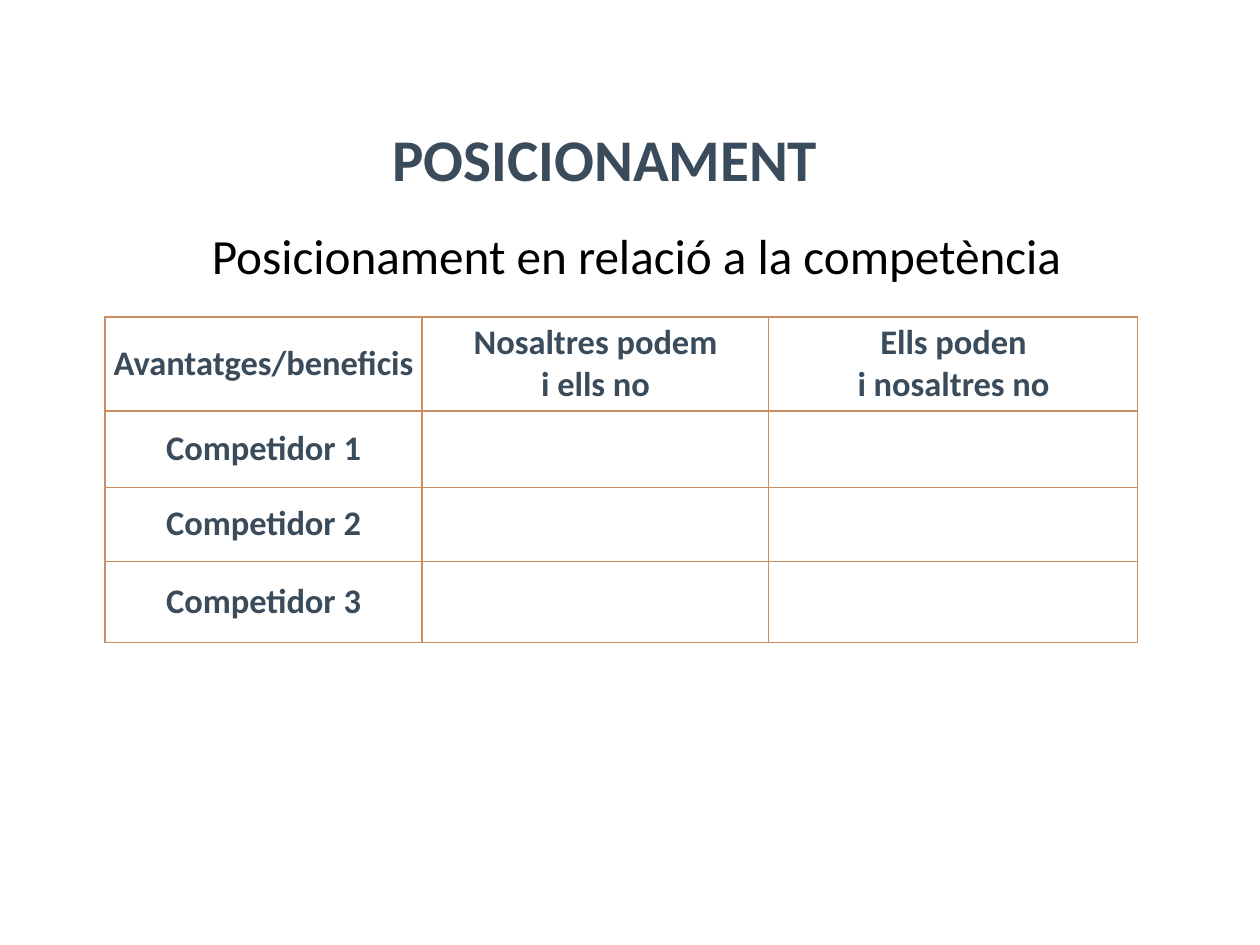
"""Build the competitive positioning slide with its comparison table."""
import pptx
import pptx.dml.color
import pptx.enum.text
import pptx.oxml
import pptx.oxml.ns
import pptx.util

TITLE = "posicionament"
SUBTITLE = "Posicionament en relació a la competència"
ROWS = [
    ["Avantatges/beneficis", "Nosaltres podem\ni ells no", "Ells poden\ni nosaltres no"],
    ["Competidor 1", "", ""],
    ["Competidor 2", "", ""],
    ["Competidor 3", "", ""],
]
COL_WIDTHS = [317, 347, 369]
ROW_HEIGHTS = [74, 76, 74, 81]
TABLE_LEFT, TABLE_TOP = 105, 317
TITLE_BOX = (371, 73, 468, 128)
SUBTITLE_BOX = (105, 221, 1063, 68)
INSET = 5
SLATE, COPPER, WHITE, BLACK = "3A4C5B", "CC8E60", "FFFFFF", "000000"
ANCHOR = pptx.enum.text.MSO_ANCHOR


def px(n):
    return pptx.util.Emu(n * 10320)


def rgb(value):
    return pptx.dml.color.RGBColor.from_string(value)


def style(tf, size, color, bold=False):
    for p in tf.paragraphs:
        p.alignment = pptx.enum.text.PP_ALIGN.CENTER
        p.font.name = "Calibri"
        p.font.size = pptx.util.Pt(size)
        p.font.bold = bold
        p.font.color.rgb = rgb(color)


def set_insets(target):
    target.margin_left = target.margin_right = px(INSET)
    target.margin_top = target.margin_bottom = px(INSET)


def set_borders(cell, top, bottom):
    tcPr = cell._tc.get_or_add_tcPr()
    widths = {"L": 1, "R": 1, "T": top, "B": bottom}
    for i, (side, width) in enumerate(widths.items()):
        tcPr.insert(i, pptx.oxml.parse_xml(
            f'<a:ln{side} {pptx.oxml.ns.nsdecls("a")} w="{pptx.util.Pt(width)}">'
            f'<a:solidFill><a:srgbClr val="{COPPER}"/></a:solidFill></a:ln{side}>'))


def add_title(s):
    sp = s.shapes.title
    sp.left, sp.top, sp.width, sp.height = map(px, TITLE_BOX)
    tf = sp.text_frame
    tf.text = TITLE
    tf.word_wrap = True
    tf.auto_size = pptx.enum.text.MSO_AUTO_SIZE.NONE
    tf.vertical_anchor = ANCHOR.BOTTOM
    set_insets(tf)
    style(tf, 60, SLATE, True)
    r = tf.paragraphs[0].runs[0]
    r._r.get_or_add_rPr().set("cap", "small")


def add_subtitle(s):
    tf = s.shapes.add_textbox(*map(px, SUBTITLE_BOX)).text_frame
    tf.text = SUBTITLE
    tf.word_wrap = True
    style(tf, 40, BLACK)


def add_comparison(s):
    size = (TABLE_LEFT, TABLE_TOP, sum(COL_WIDTHS), sum(ROW_HEIGHTS))
    table = s.shapes.add_table(len(ROWS), len(COL_WIDTHS), *map(px, size)).table
    table.first_row = table.horz_banding = False
    for column, width in zip(table.columns, COL_WIDTHS):
        column.width = px(width)
    for i, (row, height) in enumerate(zip(table.rows, ROW_HEIGHTS)):
        row.height = px(height)
        for cell, text in zip(row.cells, ROWS[i]):
            cell.text = text
            cell.vertical_anchor = ANCHOR.MIDDLE
            set_insets(cell)
            cell.fill.solid()
            cell.fill.fore_color.rgb = rgb(WHITE)
            set_borders(cell, 2 if i == 1 else 1, 2 if i == 0 else 1)
            style(cell.text_frame, 28, SLATE, True)


def main():
    prs = pptx.Presentation()
    prs.slide_width, prs.slide_height = px(1260), px(945)
    s = prs.slides.add_slide(prs.slide_layouts[5])
    add_comparison(s)
    add_title(s)
    add_subtitle(s)
    prs.save("out.pptx")


if __name__ == "__main__":
    main()
